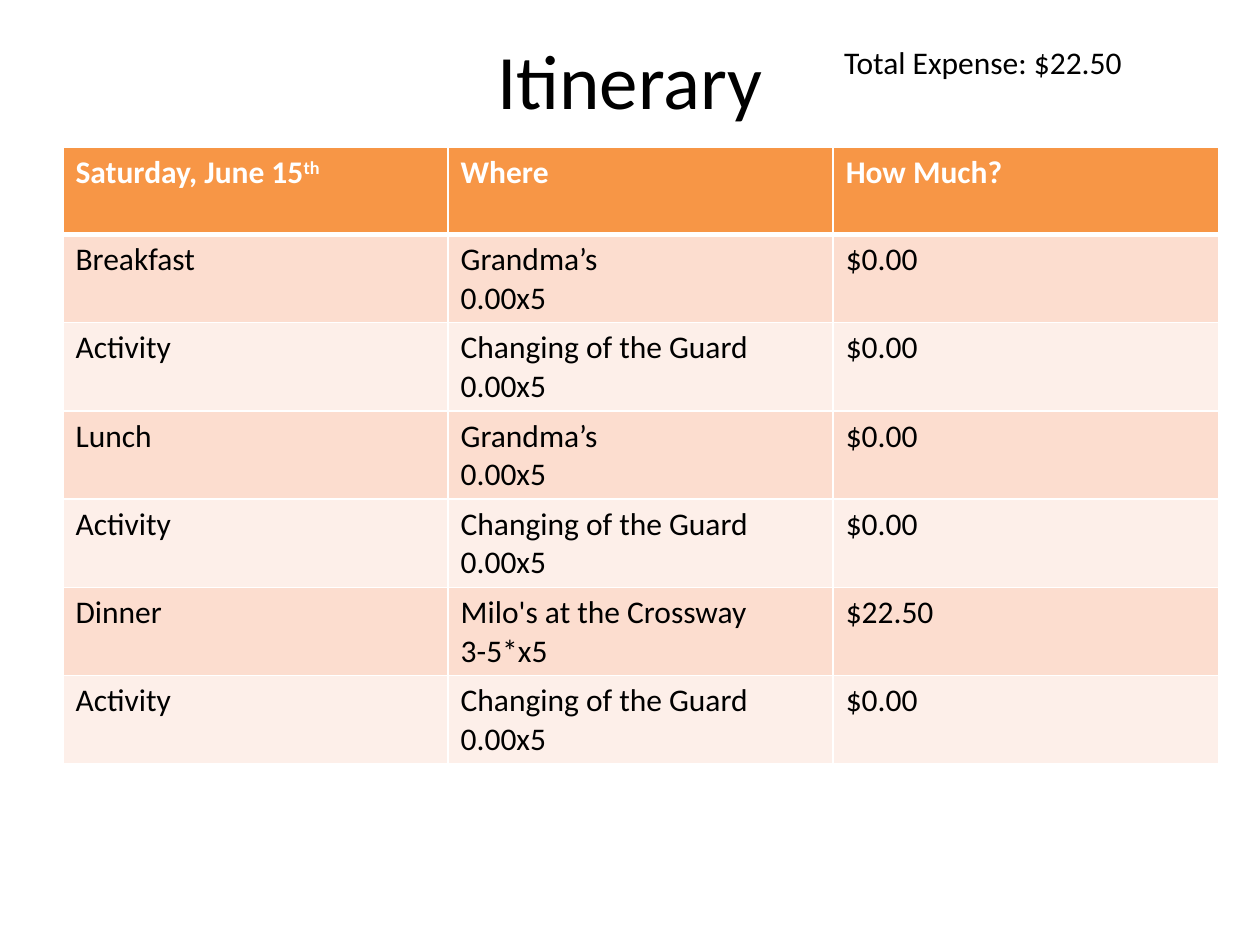
import dataclasses

import pptx
import pptx.dml.color
import pptx.enum.text
import pptx.oxml.ns
import pptx.util
from lxml import etree

Inches = pptx.util.Inches
Pt = pptx.util.Pt


@dataclasses.dataclass(frozen=True)
class Theme:
    font: str = "Calibri"
    title_size: int = 44
    body_size: int = 18
    ink: str = "000000"
    white: str = "FFFFFF"
    header_fill: str = "F79646"
    bands: tuple = ("FCDDCF", "FDEFE9")
    rule: float = 1
    header_rule: float = 3


THEME = Theme()

HEADER = ["Saturday, June 15", "Where", "How Much?"]
GUARD = "Changing of the Guard\n0.00x5"
GRANDMA = "Grandma’s\n0.00x5"
PLANS = [
    ("Breakfast", GRANDMA, "$0.00"),
    ("Activity", GUARD, "$0.00"),
    ("Lunch", GRANDMA, "$0.00"),
    ("Activity", GUARD, "$0.00"),
    ("Dinner", "Milo's at the Crossway\n3-5*x5", "$22.50"),
    ("Activity", GUARD, "$0.00"),
]


def rgb(value):
    return pptx.dml.color.RGBColor.from_string(value)


def add_span(para, text, size=THEME.body_size, color=THEME.ink, bold=False):
    span = para.add_run()
    span.text = text
    formats = {"name": THEME.font, "size": Pt(size), "bold": bold}
    for name, value in formats.items():
        setattr(span.font, name, value)
    span.font.color.rgb = rgb(color)
    return span


def fill_text(frame, text, **style):
    for index, line in enumerate(text.split("\n")):
        para = frame.add_paragraph() if index else frame.paragraphs[0]
        add_span(para, line, **style)


def add_text(page, text, left, top, width, height, **style):
    box = page.shapes.add_textbox(
        Inches(left), Inches(top), Inches(width), Inches(height))
    box.text_frame.word_wrap = True
    fill_text(box.text_frame, text, **style)
    return box


def set_borders(cell, top, bottom):
    properties = cell._tc.get_or_add_tcPr()
    widths = {"lnL": THEME.rule, "lnR": THEME.rule, "lnT": top, "lnB": bottom}
    qn = pptx.oxml.ns.qn
    for side, width in widths.items():
        line = etree.SubElement(properties, qn(f"a:{side}"), w=str(Pt(width)))
        solid = etree.SubElement(line, qn("a:solidFill"))
        etree.SubElement(solid, qn("a:srgbClr"), val=THEME.white)


def add_itinerary(page):
    rows = [HEADER, *PLANS]
    table = page.shapes.add_table(
        len(rows), len(HEADER), Inches(0.5), Inches(1.17),
        Inches(9.17), Inches(0.69 * len(rows))).table
    for row_index, row in enumerate(rows):
        is_header = row_index == 0
        fill = THEME.header_fill if is_header else THEME.bands[(row_index - 1) % 2]
        color = THEME.white if is_header else THEME.ink
        for column_index, text in enumerate(row):
            cell = table.cell(row_index, column_index)
            # Borders come before the fill in the cell properties
            set_borders(
                cell,
                top=THEME.header_rule if row_index == 1 else THEME.rule,
                bottom=THEME.header_rule if is_header else THEME.rule)
            cell.fill.solid()
            cell.fill.fore_color.rgb = rgb(fill)
            fill_text(cell.text_frame, text, color=color, bold=is_header)

    # Raised ending of the date
    date = table.cell(0, 0).text_frame.paragraphs[0]
    ending = add_span(date, "th", color=THEME.white, bold=True)
    ending.font._element.set("baseline", "30000")


def main():
    deck = pptx.Presentation()
    deck.slide_width, deck.slide_height = Inches(10), Inches(7.5)
    page = deck.slides.add_slide(deck.slide_layouts[6])

    # Heading
    title = add_text(page, "Itinerary", 0.5, 0, 9, 1.25, size=THEME.title_size)
    title.text_frame.vertical_anchor = pptx.enum.text.MSO_ANCHOR.MIDDLE
    title.text_frame.paragraphs[0].alignment = pptx.enum.text.PP_ALIGN.CENTER

    # Total
    add_text(page, "Total Expense: $22.50", 6.6, 0.29, 3.08, 0.4)

    # Day plan
    add_itinerary(page)

    deck.save("out.pptx")


if __name__ == "__main__":
    main()
